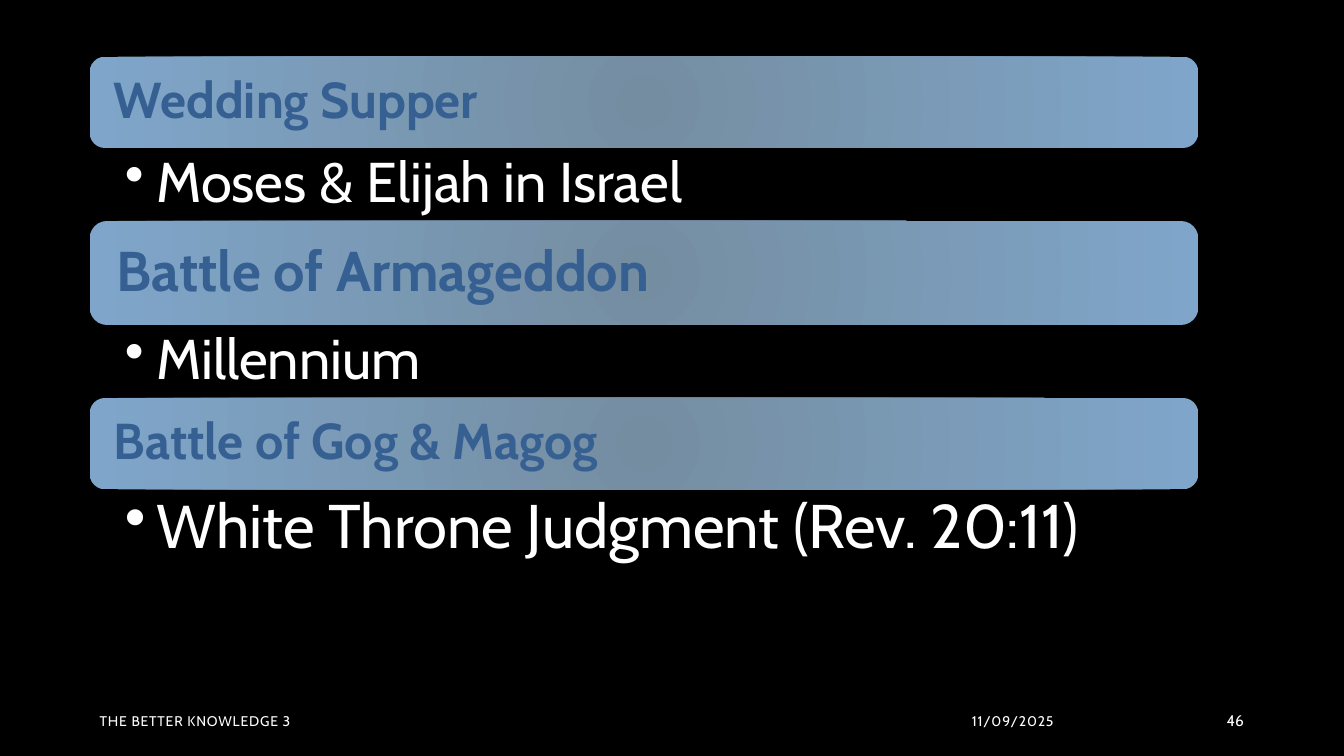
"""Build a slide of three event banners, each followed by a bullet."""
from dataclasses import dataclass

from lxml import etree
from pptx import Presentation
from pptx.dml.color import RGBColor
from pptx.enum.shapes import MSO_SHAPE
from pptx.enum.text import MSO_ANCHOR, PP_ALIGN
from pptx.oxml.ns import qn
from pptx.util import Cm, Pt

ROUNDED = MSO_SHAPE.ROUNDED_RECTANGLE
TOP, MIDDLE = MSO_ANCHOR.TOP, MSO_ANCHOR.MIDDLE
LEFT, RIGHT = PP_ALIGN.LEFT, PP_ALIGN.RIGHT


@dataclass(frozen=True)
class Theme:
    font: str = "Cabin"
    background: str = "000000"
    text: str = "FFFFFF"
    heading: str = "376092"
    banner_center: str = "758DA1"
    banner_edge: str = "7FA6CA"
    footer_size: int = 10
    number_size: int = 11


THEME = Theme()

EVENTS = [
    {"heading": "Wedding Supper", "heading_size": 36, "banner_height": 2.3,
     "bullet": "Moses & Elijah in Israel", "bullet_size": 40, "bullet_height": 1.84},
    {"heading": "Battle of Armageddon", "heading_size": 40, "banner_height": 2.62,
     "bullet": "Millennium", "bullet_size": 40, "bullet_height": 1.84},
    {"heading": "Battle of Gog & Magog", "heading_size": 36, "banner_height": 2.3,
     "bullet": "White Throne Judgment (Rev. 20:11)", "bullet_size": 44, "bullet_height": 2.06},
]
FOOTERS = [
    ("11/09/2025", 21.16, 5.64, RIGHT, THEME.footer_size, 0.6),
    ("THE BETTER KNOWLEDGE 3", 2.26, 10.72, LEFT, THEME.footer_size, 0.6),
    ("46", 27.94, 3.66, RIGHT, THEME.number_size, 0),
]

LIST_LEFT, LIST_TOP, LIST_WIDTH = 2.26, 1.43, 27.94
FOOTER_TOP, FOOTER_HEIGHT = 17.65, 1.02
BULLET_INDENT = 0.79


def write_text(box, text, size, color=THEME.text, bold=False, align=LEFT, anchor=MIDDLE,
               insets=(0.25, 0.13, 0.25, 0.13), line_spacing=None, tracking=0, bullet=False):
    frame = box.text_frame
    frame.word_wrap = True
    frame.vertical_anchor = anchor
    (frame.margin_left, frame.margin_top,
     frame.margin_right, frame.margin_bottom) = map(Cm, insets)
    para = frame.paragraphs[0]
    para.alignment = align
    if line_spacing:
        para.line_spacing = line_spacing
    if bullet:
        properties = para._p.get_or_add_pPr()
        properties.set("marL", str(Cm(BULLET_INDENT)))
        properties.set("indent", str(-Cm(BULLET_INDENT)))
        etree.SubElement(properties, qn("a:buChar"), char="•")
    span = para.add_run()
    span.text = text
    span.font.name = THEME.font
    span.font.size = Pt(size)
    span.font.bold = bold
    span.font.color.rgb = RGBColor.from_string(color)
    if tracking:
        span.font._element.set("spc", str(round(tracking * 100)))


def fill_radial(shape, colors):
    shape.fill.gradient()
    for stop, color in zip(shape.fill.gradient_stops, colors):
        stop.color.rgb = RGBColor.from_string(color)
    gradient = shape._element.spPr.find(qn("a:gradFill"))
    linear = gradient.find(qn("a:lin"))
    radial = etree.Element(qn("a:path"), path="circle")
    etree.SubElement(radial, qn("a:fillToRect"), dict.fromkeys("ltrb", "100000"))
    gradient.replace(linear, radial)


def add_event(page, event, top):
    banner_height, bullet_height = event["banner_height"], event["bullet_height"]
    banner = page.shapes.add_shape(
        ROUNDED, Cm(LIST_LEFT), Cm(top), Cm(LIST_WIDTH), Cm(banner_height))
    banner.shadow.inherit = False
    banner.line.fill.background()
    fill_radial(banner, (THEME.banner_center, THEME.banner_edge))
    inset = event["heading_size"] / 72
    write_text(banner, event["heading"], event["heading_size"], color=THEME.heading,
               bold=True, insets=(inset, 0.4, inset, 0.4), line_spacing=0.9)
    box = page.shapes.add_textbox(
        Cm(LIST_LEFT), Cm(top + banner_height), Cm(LIST_WIDTH), Cm(bullet_height))
    write_text(box, event["bullet"], event["bullet_size"], anchor=TOP,
               insets=(0.89, 0.15, 0.8, 0.15), line_spacing=0.9, bullet=True)
    return top + banner_height + bullet_height


def main():
    deck = Presentation()
    deck.slide_width, deck.slide_height = Cm(33.87), Cm(19.05)
    page = deck.slides.add_slide(deck.slide_layouts[6])
    page.background.fill.solid()
    page.background.fill.fore_color.rgb = RGBColor.from_string(THEME.background)
    for text, left, width, align, size, tracking in FOOTERS:
        box = page.shapes.add_textbox(Cm(left), Cm(FOOTER_TOP), Cm(width), Cm(FOOTER_HEIGHT))
        write_text(box, text, size, align=align, tracking=tracking)
    top = LIST_TOP
    for event in EVENTS:
        top = add_event(page, event, top)
    deck.save("out.pptx")


if __name__ == "__main__":
    main()
